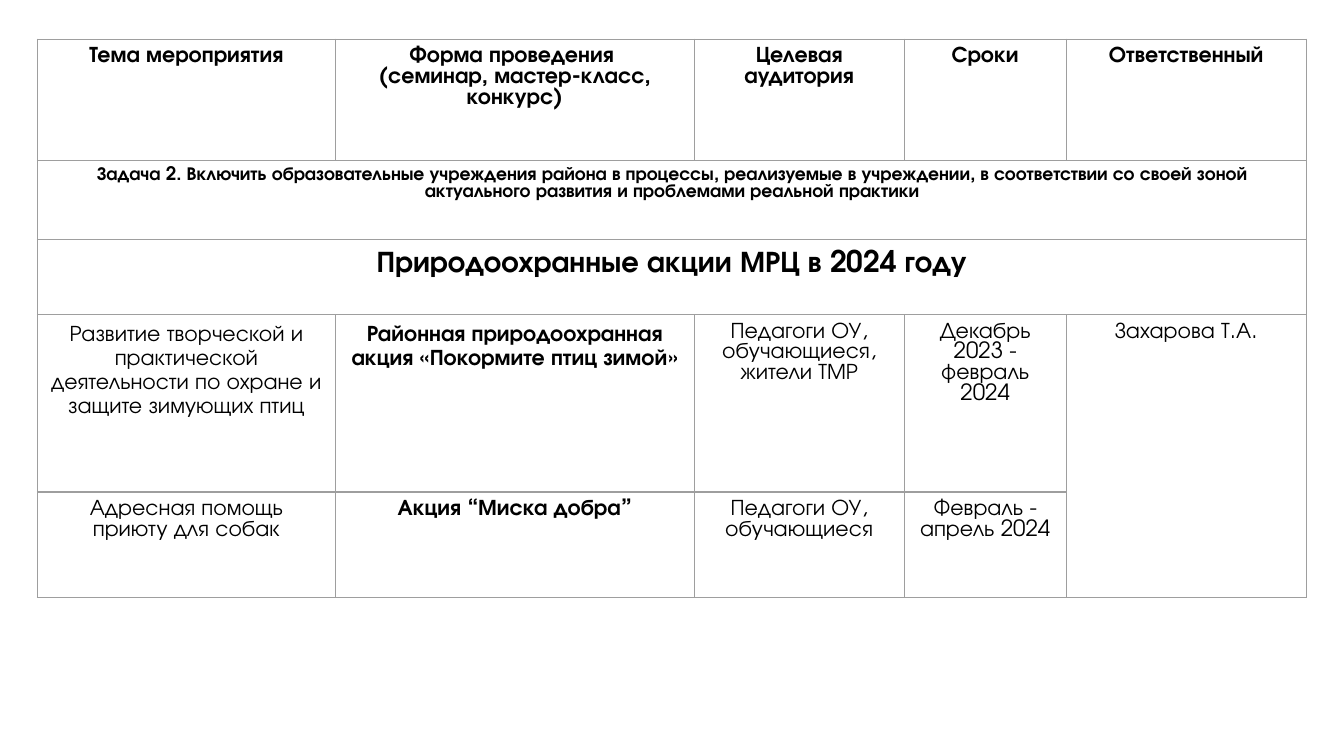
from lxml.etree import SubElement
from pptx import Presentation
from pptx.dml.color import RGBColor
from pptx.enum.text import PP_ALIGN
from pptx.oxml.ns import qn
from pptx.util import Cm, Pt

FONT, INK, RULE = "TeX Gyre Adventor", "000000", "9E9E9E"
LEFT, TOP = 0.71, 0.74
COLS = [5.63, 6.78, 3.97, 3.06, 4.54]
ROWS = [2.29, 1.5, 1.42, 3.35, 2.0]

TEXTS = [
    ["Тема мероприятия",
     "Форма проведения \n(семинар, мастер-класс, конкурс)",
     "Целевая аудитория", "Сроки", "Ответственный"],
    ["Задача 2. Включить образовательные учреждения района в процессы, "
     "реализуемые в учреждении, в соответствии со своей зоной "
     "актуального развития и проблемами реальной практики"],
    ["Природоохранные акции МРЦ в 2024 году"],
    ["Развитие творческой и практической деятельности по охране и "
     "защите зимующих птиц",
     "Районная природоохранная акция «Покормите птиц зимой»",
     "Педагоги ОУ, обучающиеся, жители ТМР",
     "Декабрь 2023 - февраль 2024", "Захарова Т.А."],
    ["Адресная помощь приюту для собак", "Акция “Миска добра”",
     "Педагоги ОУ, обучающиеся", "Февраль - апрель 2024"],
]
SIZES = [12, 10, 16, 12, 12]
MERGES = [((1, 0), (1, 4)), ((2, 0), (2, 4)), ((3, 4), (4, 4))]
LOOSE = {(2, 0), (3, 0), (3, 1)}  # cells with 1.15 line spacing


def frame(cell):
    """Draw thin rules on all four sides and clear the fill."""
    props = cell._tc.get_or_add_tcPr()
    for side in ("a:lnL", "a:lnR", "a:lnT", "a:lnB"):
        line = SubElement(props, qn(side), w=str(Pt(0.75)))
        fill = SubElement(line, qn("a:solidFill"))
        SubElement(fill, qn("a:srgbClr"), val=RULE)
    cell.fill.background()


def write(cell, text, size, bold, gap):
    cell.text_frame.text = text
    for para in cell.text_frame.paragraphs:
        para.alignment = PP_ALIGN.CENTER
        para.line_spacing = gap
        for run in para.runs:
            font = run.font
            font.name, font.size, font.bold = FONT, Pt(size), bold
            font.color.rgb = RGBColor.from_string(INK)


deck = Presentation()
deck.slide_width, deck.slide_height = Cm(25.4), Cm(14.29)
slide = deck.slides.add_slide(deck.slide_layouts[6])

table = slide.shapes.add_table(
    len(ROWS), len(COLS), Cm(LEFT), Cm(TOP), Cm(sum(COLS)), Cm(sum(ROWS))
).table
table.first_row = table.horz_banding = False
for col, width in zip(table.columns, COLS):
    col.width = Cm(width)
for row, height in zip(table.rows, ROWS):
    row.height = Cm(height)

for cell in table.iter_cells():
    frame(cell)
for start, end in MERGES:
    table.cell(*start).merge(table.cell(*end))
for r, texts in enumerate(TEXTS):
    for c, text in enumerate(texts):
        bold = r < 3 or c == 1
        gap = 1.15 if (r, c) in LOOSE else 1.0
        write(table.cell(r, c), text, SIZES[r], bold, gap)

deck.save("out.pptx")
